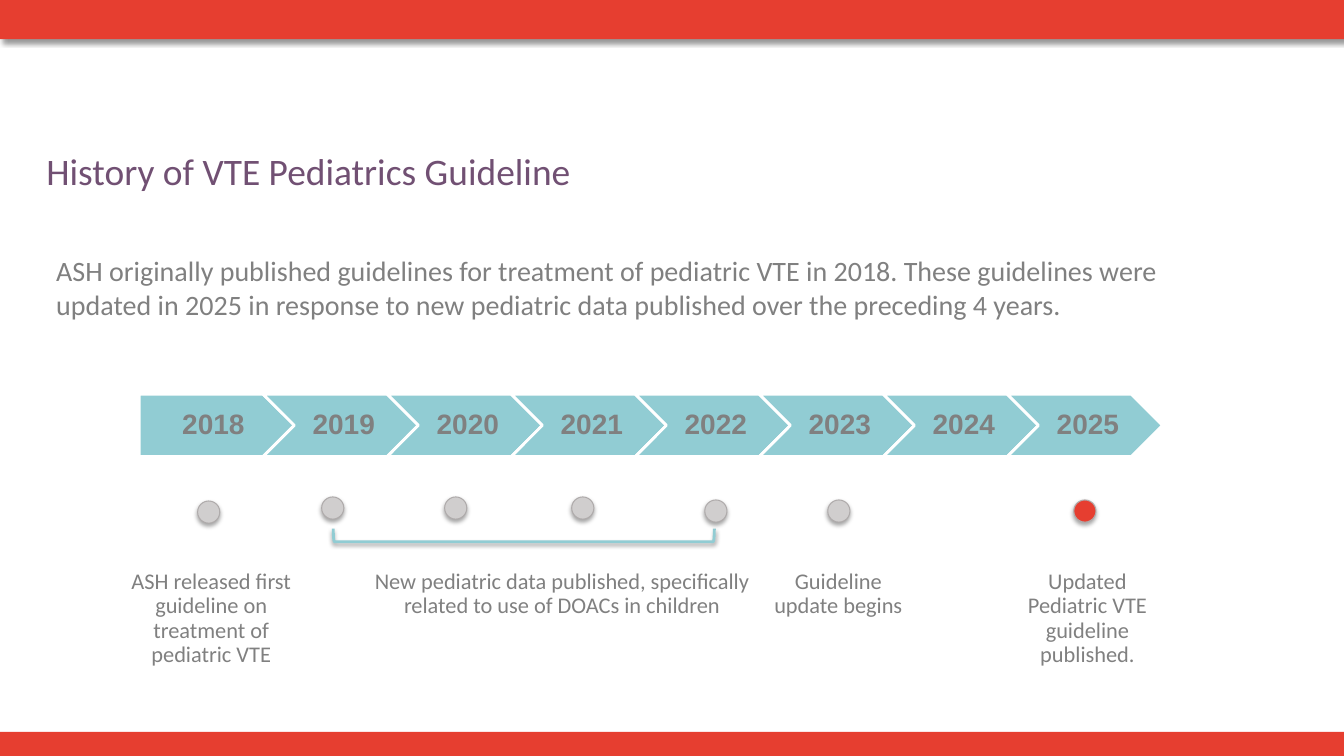
from dataclasses import dataclass

from lxml.etree import SubElement
from pptx import Presentation
from pptx.dml.color import RGBColor
from pptx.enum.shapes import MSO_SHAPE
from pptx.enum.text import MSO_ANCHOR, MSO_AUTO_SIZE, PP_ALIGN
from pptx.oxml.ns import qn
from pptx.util import Inches, Pt


@dataclass(frozen=True)
class Theme:
    red: str = "E63E30"
    teal: str = "91CCD3"
    purple: str = "715073"
    gray: str = "808080"
    dot: str = "D0CECE"
    dot_line: str = "AFABAB"
    white: str = "FFFFFF"
    body_font: str = "Calibri"
    year_font: str = "Arial"
    title_size: float = 26.7
    body_size: float = 20
    label_size: float = 16


THEME = Theme()


def write_text(tf, text, *, size, color=THEME.gray, font=THEME.body_font,
               bold=False, align=PP_ALIGN.LEFT, anchor=MSO_ANCHOR.TOP,
               insets=(0.1, 0.05, 0.1, 0.05), line_spacing=None, after=0):
    tf.word_wrap = True
    tf.auto_size = MSO_AUTO_SIZE.NONE
    tf.vertical_anchor = anchor
    tf.margin_left, tf.margin_top, tf.margin_right, tf.margin_bottom = map(Inches, insets)
    p = tf.paragraphs[0]
    p.alignment = align
    p.space_before = Pt(0)
    p.space_after = Pt(after)
    if line_spacing:
        p.line_spacing = line_spacing
    r = p.add_run()
    r.text = text
    r.font.name = font
    r.font.size = Pt(size)
    r.font.bold = bold
    r.font.color.rgb = RGBColor.from_string(color)


def add_shadow(sp, alpha, blur, dist, angle):
    effects = sp._element.spPr.find(qn("a:effectLst"))
    shadow = SubElement(effects, qn("a:outerShdw"), blurRad=str(Pt(blur)),
                        dist=str(Pt(dist)), dir=str(angle * 60000),
                        algn="ctr", rotWithShape="0")
    color = SubElement(shadow, qn("a:srgbClr"), val="000000")
    SubElement(color, qn("a:alpha"), val=str(alpha * 1000))


def add_shape(s, kind, box, *, fill=None, line=None, line_width=1, shadow=None):
    sp = s.shapes.add_shape(kind, *map(Inches, box))
    sp.shadow.inherit = False
    if fill:
        sp.fill.solid()
        sp.fill.fore_color.rgb = RGBColor.from_string(fill)
    else:
        sp.fill.background()
    if line:
        sp.line.color.rgb = RGBColor.from_string(line)
        sp.line.width = Pt(line_width)
    else:
        sp.line.fill.background()
    if shadow:
        add_shadow(sp, *shadow)
    return sp


def add_text(s, text, box, **fmt):
    sp = s.shapes.add_textbox(*map(Inches, box))
    write_text(sp.text_frame, text, **fmt)


def add_title(s, text, box):
    title = s.shapes.title
    title.left, title.top, title.width, title.height = map(Inches, box)
    write_text(title.text_frame, text, size=THEME.title_size, color=THEME.purple,
               insets=(0, 0, 0, 0))


def add_years(s, first, last):
    for i, year in enumerate(range(first, last + 1)):
        kind = MSO_SHAPE.CHEVRON if i else MSO_SHAPE.PENTAGON
        sp = add_shape(s, kind, (1.38 + 1.23 * i, 3.91, 1.54, 0.62),
                       fill=THEME.teal, line=THEME.white, line_width=2)
        write_text(sp.text_frame, str(year), size=THEME.body_size, font=THEME.year_font,
                   bold=True, align=PP_ALIGN.CENTER, anchor=MSO_ANCHOR.MIDDLE,
                   insets=(0.09 if i else 0.12, 0.06, 0.03, 0.06),
                   line_spacing=0.9, after=7)


def add_dot(s, left, top, fill=THEME.dot):
    add_shape(s, MSO_SHAPE.OVAL, (left, top, 0.22, 0.22), fill=fill,
              line=THEME.dot_line, line_width=0.75, shadow=(35, 3.1, 1.8, 90))


def add_label(s, text, left, width, height):
    add_text(s, text, (left, 5.61, width, height), size=THEME.label_size,
             align=PP_ALIGN.CENTER, line_spacing=0.9, after=5.6)


def main():
    prs = Presentation()
    prs.slide_width = Inches(13.33)
    prs.slide_height = Inches(7.5)
    s = prs.slides.add_slide(prs.slide_layouts[5])

    add_shape(s, MSO_SHAPE.RECTANGLE, (0, 7.26, 13.33, 0.24), fill=THEME.red)
    add_shape(s, MSO_SHAPE.RECTANGLE, (0, -0.01, 13.33, 0.4), fill=THEME.red,
              shadow=(40, 4, 3, 45))
    add_title(s, "History of VTE Pediatrics Guideline", (0.46, 1.47, 12, 0.78))
    add_text(s, "ASH originally published guidelines for treatment of pediatric VTE in 2018. "
             "These guidelines were updated in 2025 in response to new pediatric data "
             "published over the preceding 4 years.",
             (0.46, 2.47, 11.6, 0.77), size=THEME.body_size)

    add_years(s, 2018, 2025)

    bracket = add_shape(s, MSO_SHAPE.RIGHT_BRACKET, (5.13, 3.42, 0.13, 3.78),
                        line=THEME.teal, line_width=2, shadow=(38, 3.1, 1.6, 90))
    bracket.rotation = 90

    for left, top in ((1.96, 4.97), (3.19, 4.93), (4.41, 4.93),
                      (5.67, 4.93), (6.99, 4.96), (8.21, 4.96)):
        add_dot(s, left, top)
    add_dot(s, 10.65, 4.96, THEME.red)

    for text, left, width, height in (
        ("ASH released first guideline on treatment of pediatric VTE", 1.17, 1.85, 1.07),
        ("New pediatric data published, specifically related to use of DOACs in children",
         3.61, 3.93, 0.59),
        ("Guideline update begins", 7.58, 1.47, 0.83),
        ("Updated Pediatric VTE guideline published.", 9.99, 1.59, 1.07),
    ):
        add_label(s, text, left, width, height)

    prs.save("out.pptx")


if __name__ == "__main__":
    main()
